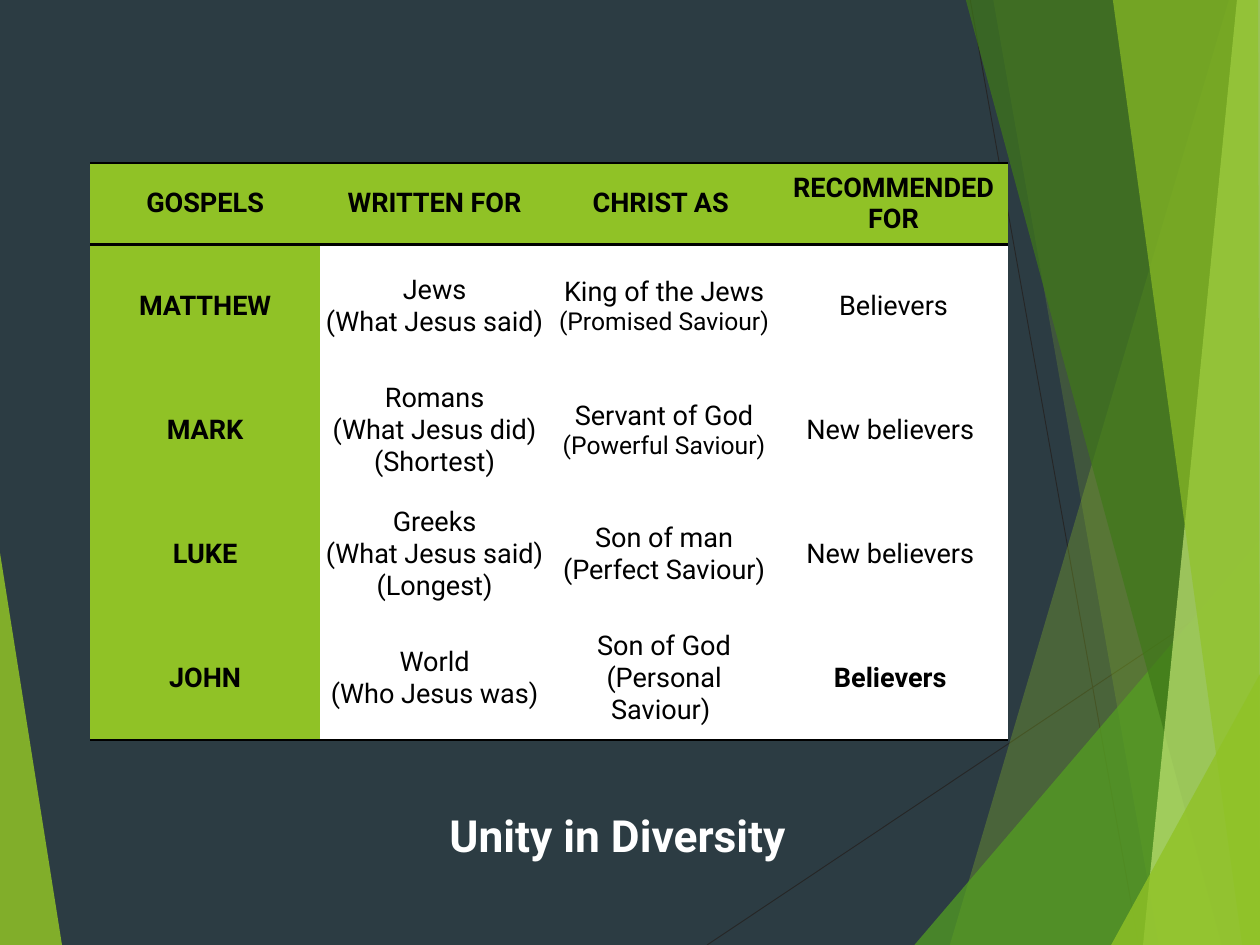
from lxml.etree import SubElement
from pptx import Presentation
from pptx.dml.color import RGBColor
from pptx.enum.shapes import MSO_CONNECTOR
from pptx.enum.text import MSO_ANCHOR, MSO_AUTO_SIZE, PP_ALIGN
from pptx.oxml import parse_xml
from pptx.oxml.ns import nsdecls, qn
from pptx.util import Pt

PX = 9144  # EMU per px, 100 px to the inch
WIDTH, HEIGHT = 1422, 1067
FONT = "Roboto"
BLACK, WHITE, GREEN = "000000", "FFFFFF", "90C226"

LINES = [(798, HEIGHT, WIDTH, 650), (1095, 0, 1285, HEIGHT)]

# Colour, opacity in percent, corners
FACETS = [
    (GREEN, 85, [(0, 624), (70, HEIGHT), (0, HEIGHT)]),
    (GREEN, 30, [(1387, 0), (1072, HEIGHT), (WIDTH, HEIGHT), (WIDTH, 0)]),
    (GREEN, 20, [(1121, 0), (1308, HEIGHT), (WIDTH, HEIGHT), (WIDTH, 0)]),
    ("54A021", 72, [(1032, HEIGHT), (WIDTH, 610), (WIDTH, HEIGHT)]),
    ("3F7819", 70, [(1090, 0), (1379, HEIGHT), (WIDTH, HEIGHT), (WIDTH, 0)]),
    ("C0E474", 70, [(1396, 0), (1290, HEIGHT), (WIDTH, HEIGHT), (WIDTH, 0)]),
    (GREEN, 65, [(1256, 0), (1402, HEIGHT), (WIDTH, HEIGHT), (1420, 0)]),
    (GREEN, 80, [(1254, HEIGHT), (WIDTH, 761), (WIDTH, HEIGHT)]),
]

GOSPELS = [
    ["GOSPELS", "WRITTEN FOR", "CHRIST AS ", "RECOMMENDED FOR"],
    ["MATTHEW", "Jews\n(What Jesus said)",
     "King of the Jews\n(Promised Saviour)", "Believers"],
    ["MARK", "Romans\n(What Jesus did)\n(Shortest)",
     "Servant of God\n(Powerful Saviour)", "New believers "],
    ["LUKE", "Greeks\n(What Jesus said)\n(Longest)",
     "Son of man\n(Perfect Saviour)", "New believers "],
    ["JOHN", "World\n(Who Jesus was)",
     "Son of God\n(Personal Saviour) ", "Believers "],
]
SMALL_LINES = ("(Promised Saviour)", "(Powerful Saviour)")
BOLD_CELL = (4, 3)
RULED_EDGES = (0, 1, len(GOSPELS))


def px(length):
    return length * PX


def rgb(colour):
    return RGBColor.from_string(colour)


def set_font(paragraph, size, colour, bold):
    paragraph.alignment = PP_ALIGN.CENTER
    font = paragraph.font
    font.name, font.size, font.bold = FONT, Pt(size), bold
    font.color.rgb = rgb(colour)


def add_line(slide, x1, y1, x2, y2):
    line = slide.shapes.add_connector(
        MSO_CONNECTOR.STRAIGHT, px(x1), px(y1), px(x2), px(y2))
    line.line.color.rgb = rgb("262626")
    line.line.width = Pt(0.75)
    SubElement(line.element.spPr, qn("a:effectLst"))


def add_facet(slide, colour, opacity, corners):
    builder = slide.shapes.build_freeform(*corners[0], scale=PX)
    builder.add_line_segments(corners[1:], close=True)
    shape = builder.convert_to_shape()
    shape.shadow.inherit = False
    shape.line.fill.background()
    shape.fill.solid()
    shape.fill.fore_color.rgb = rgb(colour)
    fill_colour = shape.element.spPr.find(qn("a:solidFill"))[0]
    SubElement(fill_colour, qn("a:alpha"), val=str(opacity * 1000))


def set_borders(cell, row):
    """Rule the chosen row edges and clear every other border."""
    ruled = {"lnT": row in RULED_EDGES, "lnB": row + 1 in RULED_EDGES}
    solid = f'<a:solidFill><a:srgbClr val="{BLACK}"/></a:solidFill>'
    properties = cell._tc.get_or_add_tcPr()
    for position, side in enumerate(("lnL", "lnR", "lnT", "lnB")):
        fill = solid if ruled.get(side) else "<a:noFill/>"
        border = f'<a:{side} {nsdecls("a")} w="{Pt(2)}">{fill}</a:{side}>'
        properties.insert(position, parse_xml(border))


def fill_cell(cell, row, column, text):
    heading = row == 0 or column == 0
    cell.fill.solid()
    cell.fill.fore_color.rgb = rgb(GREEN if heading else WHITE)
    cell.vertical_anchor = MSO_ANCHOR.MIDDLE
    cell.margin_left = cell.margin_right = px(6)
    cell.margin_top = cell.margin_bottom = px(6)
    cell.text = text
    for paragraph in cell.text_frame.paragraphs:
        size = 20 if paragraph.text in SMALL_LINES else 22
        set_font(paragraph, size, BLACK, heading or (row, column) == BOLD_CELL)
    set_borders(cell, row)


def add_gospel_table(slide):
    table = slide.shapes.add_table(
        len(GOSPELS), len(GOSPELS[0]),
        px(102), px(184), px(1036), px(652)).table
    for column in table.columns:
        column.width = px(259)
    for index, row in enumerate(table.rows):
        row.height = px(140 if index else 92)
    for row, texts in enumerate(GOSPELS):
        for column, text in enumerate(texts):
            fill_cell(table.cell(row, column), row, column, text)


def set_title(slide, text):
    title = slide.shapes.title
    title.left, title.top = px(485), px(908)
    title.width, title.height = px(424), px(71)
    frame = title.text_frame
    frame.text = text
    frame.word_wrap = False
    frame.auto_size = MSO_AUTO_SIZE.SHAPE_TO_FIT_TEXT
    frame.vertical_anchor = MSO_ANCHOR.TOP
    set_font(frame.paragraphs[0], 36, WHITE, True)


def main():
    presentation = Presentation()
    presentation.slide_width, presentation.slide_height = px(WIDTH), px(HEIGHT)
    slide = presentation.slides.add_slide(presentation.slide_layouts[5])

    # Backdrop
    slide.background.fill.solid()
    slide.background.fill.fore_color.rgb = rgb("2C3C43")
    for line in LINES:
        add_line(slide, *line)
    for facet in FACETS:
        add_facet(slide, *facet)

    # Content
    add_gospel_table(slide)
    set_title(slide, "Unity in Diversity")

    presentation.save("out.pptx")


if __name__ == "__main__":
    main()
